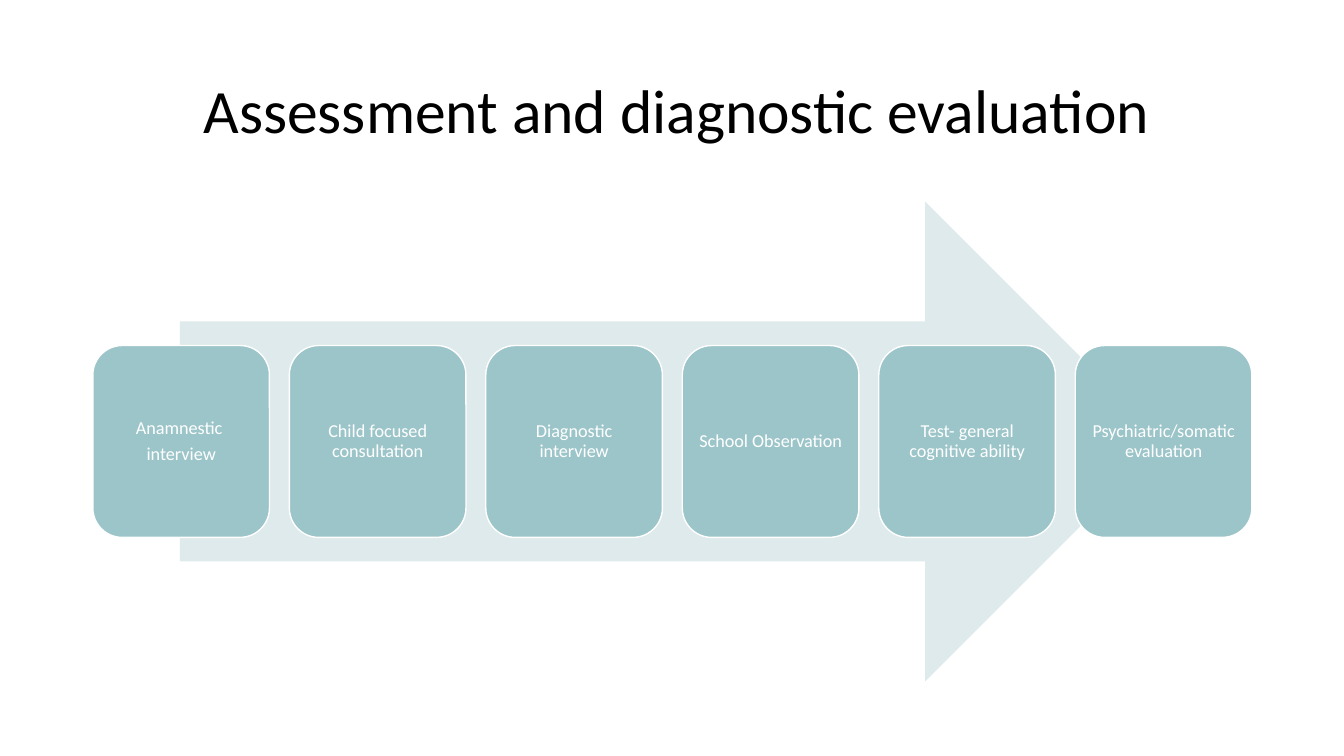
from dataclasses import dataclass

from pptx import Presentation
from pptx.dml.color import RGBColor
from pptx.enum.shapes import MSO_SHAPE
from pptx.enum.text import MSO_ANCHOR, PP_ALIGN
from pptx.util import Cm, Pt


@dataclass(frozen=True)
class Theme:
    font: str = "Calibri"
    title_size: float = 44
    step_size: float = 13
    title_color: str = "000000"
    step_color: str = "FFFFFF"
    step_fill: str = "9CC5C9"
    arrow_fill: str = "DEEAEB"
    outline: str = "FFFFFF"


@dataclass(frozen=True)
class Box:
    left: float
    top: float
    width: float
    height: float

    def lengths(self):
        return Cm(self.left), Cm(self.top), Cm(self.width), Cm(self.height)


THEME = Theme()
TITLE = "Assessment and diagnostic evaluation"
STEPS = [
    "Anamnestic \ninterview",
    "Child focused consultation",
    "Diagnostic interview",
    "School Observation",
    "Test- general cognitive ability",
    "Psychiatric/somatic evaluation",
]


def write_text(shape, text, *, size, color, align, inset=0.13, left_inset=None, space_after=0):
    frame = shape.text_frame
    frame.word_wrap = True
    frame.vertical_anchor = MSO_ANCHOR.MIDDLE
    frame.margin_left = Cm(inset if left_inset is None else left_inset)
    frame.margin_right = frame.margin_top = frame.margin_bottom = Cm(inset)
    for index, line in enumerate(text.split("\n")):
        para = frame.paragraphs[0] if index == 0 else frame.add_paragraph()
        para.alignment = align
        para.line_spacing = 0.9
        para.space_after = Pt(space_after)
        span = para.add_run()
        span.text = line
        span.font.name = THEME.font
        span.font.size = Pt(size)
        span.font.color.rgb = RGBColor.from_string(color)


def add_filled_shape(page, kind, box, fill, outline=None):
    shape = page.shapes.add_shape(kind, *box.lengths())
    shape.shadow.inherit = False
    shape.fill.solid()
    shape.fill.fore_color.rgb = RGBColor.from_string(fill)
    if outline:
        shape.line.color.rgb = RGBColor.from_string(outline)
        shape.line.width = Pt(1)
    else:
        shape.line.fill.background()
    return shape


def add_title(page, box):
    title = page.shapes.add_textbox(*box.lengths())
    write_text(title, TITLE, size=THEME.title_size, color=THEME.title_color,
               align=PP_ALIGN.LEFT, left_inset=2.79)


def add_process(page, box, gap=0.5):
    arrow_box = Box(box.left + box.width * 0.075, box.top, box.width * 0.85, box.height)
    add_filled_shape(page, MSO_SHAPE.RIGHT_ARROW, arrow_box, THEME.arrow_fill)
    width = (box.width - gap * (len(STEPS) - 1)) / len(STEPS)
    for index, text in enumerate(STEPS):
        step_box = Box(box.left + index * (width + gap), box.top + box.height * 0.3,
                       width, box.height * 0.4)
        step = add_filled_shape(page, MSO_SHAPE.ROUNDED_RECTANGLE, step_box,
                                THEME.step_fill, THEME.outline)
        write_text(step, text, size=THEME.step_size, color=THEME.step_color,
                   align=PP_ALIGN.CENTER, space_after=5)


def main():
    deck = Presentation()
    deck.slide_width, deck.slide_height = Cm(33.87), Cm(19.05)
    page = deck.slides.add_slide(deck.slide_layouts[6])
    add_title(page, Box(2.34, 1.02, 29.21, 3.68))
    add_process(page, Box(2.34, 5.08, 29.21, 12.09))
    deck.save("out.pptx")


if __name__ == "__main__":
    main()
